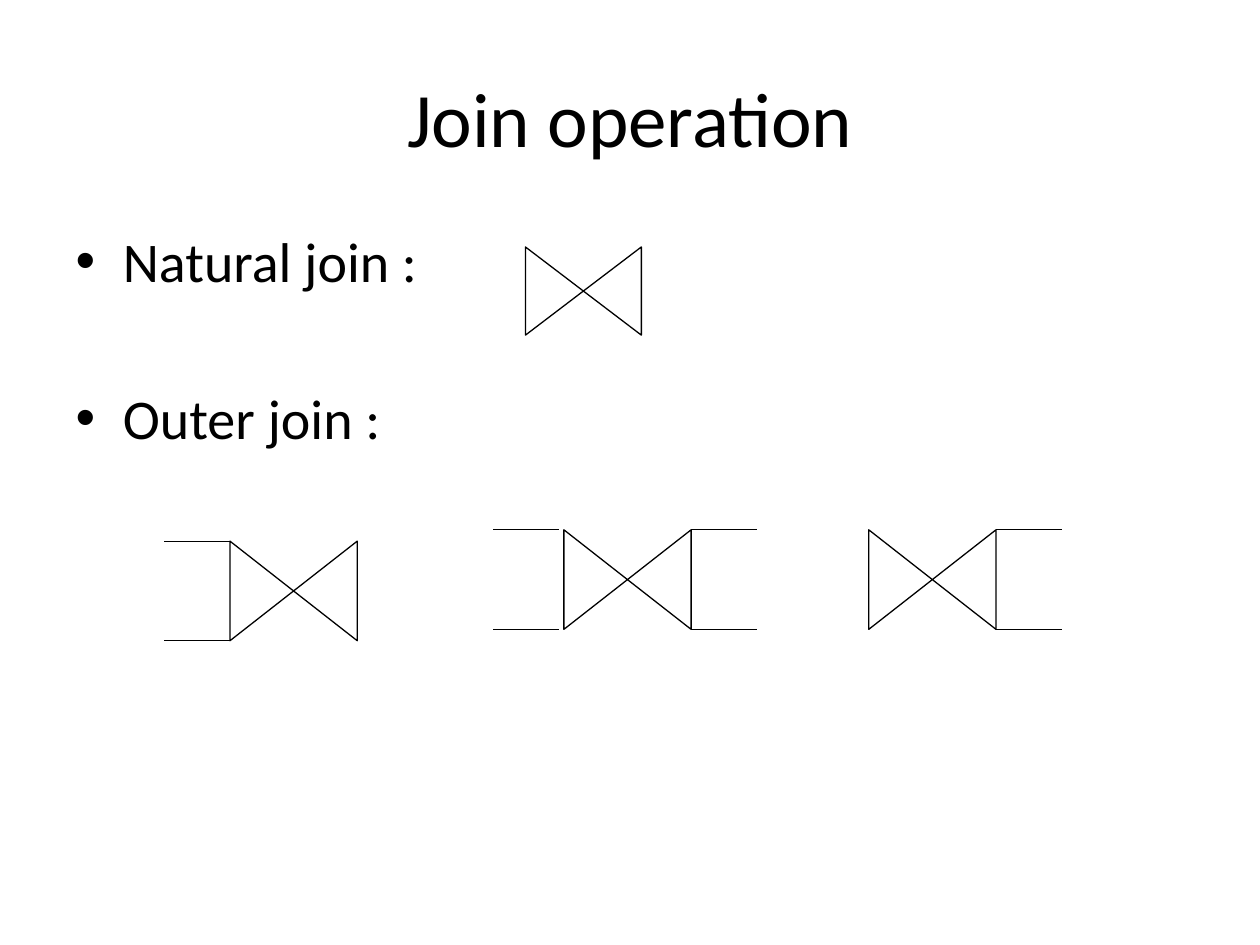
from dataclasses import dataclass

from pptx import Presentation, util as u
from pptx.dml.color import RGBColor
from pptx.enum import shapes, text
from pptx.oxml.xmlchemy import OxmlElement
from pptx.shapes.base import BaseShape
from pptx.slide import Slide
from pptx.text.text import _Paragraph as Paragraph

COLORS = {"ink": "000000", "background": "FFFFFF"}
INK = RGBColor.from_string(COLORS["ink"])
WIDTH, HEIGHT = u.Inches(10), u.Inches(7.5)
COLUMN = WIDTH / 10  # square grid cells: 10 columns by 7.5 rows
ARM_LENGTH = 0.52


@dataclass(frozen=True)
class JoinSymbol:
    """A bow tie centred on the grid; each arm gap adds a pair of outer arms."""
    column: float
    row: float
    width: float = 1.01
    height: float = 0.79
    left_arm_gap: float | None = None
    right_arm_gap: float | None = None


JOIN_SYMBOLS = [
    JoinSymbol(4.63, 2.31, width=0.92, height=0.7),
    JoinSymbol(2.33, 4.69, left_arm_gap=0),
    JoinSymbol(4.98, 4.6, left_arm_gap=0.04, right_arm_gap=0),
    JoinSymbol(7.4, 4.6, right_arm_gap=0),
]


def grid(cells: float) -> u.Emu:
    return u.Emu(round(cells * COLUMN))


def place(shape: BaseShape, left: float, top: float, width: float, height: float) -> None:
    box = {"left": left, "top": top, "width": width, "height": height}
    for name, cells in box.items():
        setattr(shape, name, grid(cells))


def format_paragraph(paragraph: Paragraph, size: int, **settings) -> None:
    for name, value in settings.items():
        setattr(paragraph, name, value)
    for run in paragraph.runs:
        for name, value in {"name": "Calibri", "size": u.Pt(size)}.items():
            setattr(run.font, name, value)
        run.font.color.rgb = INK


def draw_outline(shape: BaseShape) -> None:
    shape.line.color.rgb = INK
    shape.line.width = u.Pt(0.75)


def draw_arm(slide: Slide, start: float, end: float, row: float) -> None:
    arm = slide.shapes.add_connector(
        shapes.MSO_CONNECTOR.STRAIGHT, grid(start), grid(row), grid(end), grid(row))
    draw_outline(arm)
    arm._element.spPr.append(OxmlElement("a:effectLst"))


def draw_join(slide: Slide, symbol: JoinSymbol) -> None:
    # The collate shape stands upright, so its sides are swapped before the turn.
    bow_tie = slide.shapes.add_shape(
        shapes.MSO_SHAPE.FLOWCHART_COLLATE,
        grid(symbol.column - symbol.height / 2), grid(symbol.row - symbol.width / 2),
        grid(symbol.height), grid(symbol.width))
    bow_tie.rotation = 270
    bow_tie.shadow.inherit = False
    bow_tie.fill.background()
    draw_outline(bow_tie)

    for side, gap in ((-1, symbol.left_arm_gap), (1, symbol.right_arm_gap)):
        if gap is None:
            continue
        start = symbol.column + side * (symbol.width / 2 + gap)
        for edge in (-1, 1):
            draw_arm(slide, start, start + side * ARM_LENGTH,
                     symbol.row + edge * symbol.height / 2)


def main() -> None:
    presentation = Presentation()
    presentation.slide_width, presentation.slide_height = WIDTH, HEIGHT
    slide = presentation.slides.add_slide(presentation.slide_layouts[1])
    slide.background.fill.solid()
    slide.background.fill.fore_color.rgb = RGBColor.from_string(COLORS["background"])

    title, body = slide.placeholders
    place(title, 0.5, 0.3, 9, 1.25)
    title.text_frame.text = "Join operation"
    title.text_frame.vertical_anchor = text.MSO_ANCHOR.MIDDLE
    format_paragraph(title.text_frame.paragraphs[0], 44, alignment=text.PP_ALIGN.CENTER)

    place(body, 0.5, 1.75, 9, 4.95)
    body.text_frame.text = "Natural join :\nOuter join :"
    natural, outer = body.text_frame.paragraphs
    format_paragraph(natural, 32)
    format_paragraph(outer, 32, space_before=u.Pt(51))

    for symbol in JOIN_SYMBOLS:
        draw_join(slide, symbol)
    presentation.save("out.pptx")


if __name__ == "__main__":
    main()
